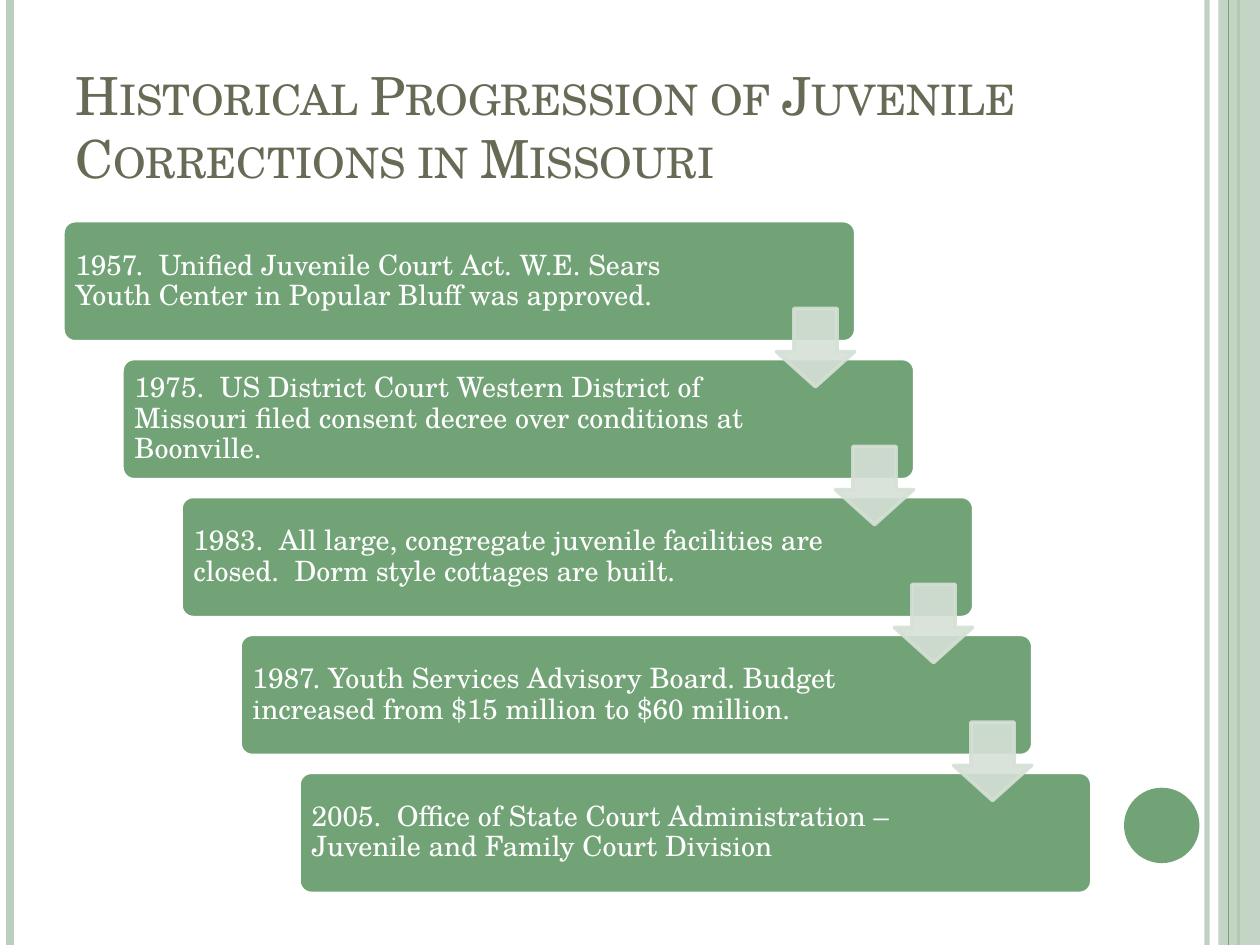
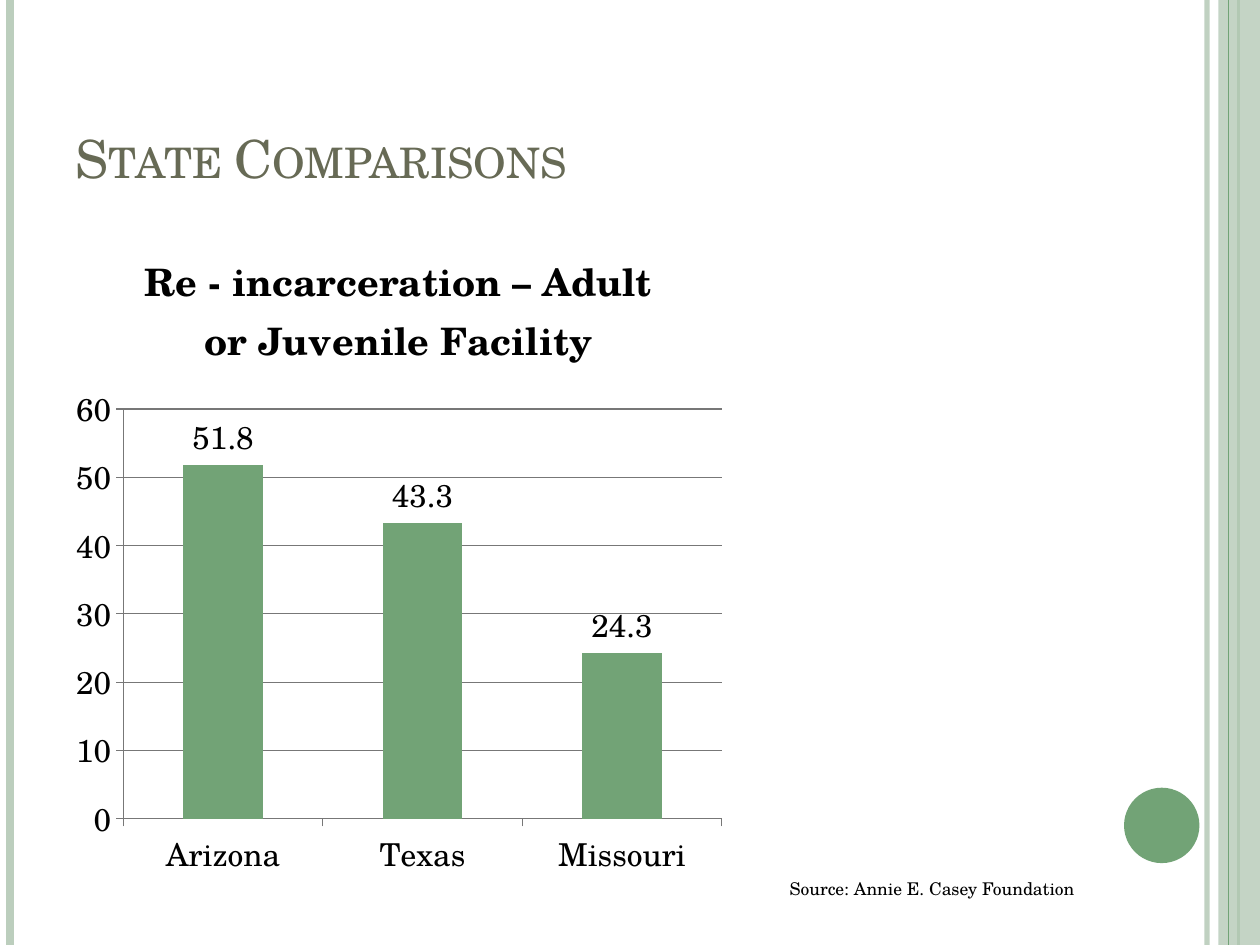
import pptx
import pptx.chart.data
import pptx.dml.color
import pptx.enum.chart
import pptx.enum.shapes
import pptx.enum.text
import pptx.oxml.ns
import pptx.oxml.xmlchemy
import pptx.util
from pptx.util import Cm

FONT = "TeX Gyre Schola"
GREEN = "72A376"
PALE = "BCCEBD"
MIST = "D5E0D6"
OLIVE = "676A55"
WHITE = "FFFFFF"
BLACK = "000000"
GRAY = "777777"
shapes_kind = pptx.enum.shapes.MSO_SHAPE
anchor = pptx.enum.text.MSO_ANCHOR
new_element = pptx.oxml.xmlchemy.OxmlElement


def paint(fill, color):
    fill.solid()
    fill.fore_color.rgb = pptx.dml.color.RGBColor.from_string(color)


def write(para, text, size, color):
    span = para.add_run()
    span.text = text
    span.font.name = FONT
    span.font.size = pptx.util.Pt(size)
    paint(span.font.fill, color)
    return span


deck = pptx.Presentation()
deck.slide_width = Cm(25.4)
deck.slide_height = Cm(19.05)
translucent = []
pages = []

edge_lines = [
    (24.33, PALE, 3, 93),
    (0.2, PALE, 4.5, 100),
    (24.97, GREEN, 1.5, 100),
    (24.77, GREEN, 0.75, 100),
]

for title in ["Historical Progression of Juvenile Corrections in Missouri",
              "State Comparisons"]:
    page = deck.slides.add_slide(deck.slide_layouts[6])
    pages.append(page)
    paint(page.background.fill, WHITE)

    for number, (x, color, width, opacity) in enumerate(edge_lines):
        if number == 3:
            band = page.shapes.add_shape(
                shapes_kind.RECTANGLE, Cm(24.56), 0, Cm(0.84), deck.slide_height)
            band.shadow.inherit = False
            paint(band.fill, PALE)
            band.line.fill.background()
            translucent.append((band, 87))
        edge = page.shapes.add_connector(
            pptx.enum.shapes.MSO_CONNECTOR.STRAIGHT,
            Cm(x), 0, Cm(x), deck.slide_height)
        paint(edge.line.fill, color)
        edge.line.width = pptx.util.Pt(width)
        edge.element.spPr.append(new_element("a:effectLst"))
        if opacity < 100:
            translucent.append((edge, opacity))

    disc = page.shapes.add_shape(
        shapes_kind.OVAL, Cm(22.66), Cm(15.88), Cm(1.52), Cm(1.52))
    disc.shadow.inherit = False
    paint(disc.fill, GREEN)
    disc.line.fill.background()

    heading = page.shapes.add_textbox(Cm(1.27), Cm(0.76), Cm(20.75), Cm(3.18))
    heading.text_frame.word_wrap = True
    heading.text_frame.vertical_anchor = anchor.BOTTOM
    span = write(heading.text_frame.paragraphs[0], title, 30, OLIVE)
    span.font._element.set("cap", "small")

history_page, comparison_page = pages

milestones = [
    "1957.  Unified Juvenile Court Act. W.E. Sears Youth Center in Popular Bluff was approved.",
    "1975.  US District Court Western District of Missouri filed consent decree over conditions at Boonville.",
    "1983.  All large, congregate juvenile facilities are closed.  Dorm style cottages are built.",
    "1987. Youth Services Advisory Board. Budget increased from $15 million to $60 million.",
    "2005.  Office of State Court Administration – Juvenile and Family Court Division",
]
step_x, step_y = 1.19, 2.78

for number, milestone in enumerate(milestones):
    box = history_page.shapes.add_shape(
        shapes_kind.ROUNDED_RECTANGLE,
        Cm(1.27 + number * step_x), Cm(4.45 + number * step_y), Cm(15.98), Cm(2.44))
    box.adjustments[0] = 0.1
    box.shadow.inherit = False
    paint(box.fill, GREEN)
    paint(box.line.fill, WHITE)
    box.line.width = pptx.util.Pt(2)
    frame = box.text_frame
    frame.word_wrap = True
    frame.vertical_anchor = anchor.MIDDLE
    frame.margin_left = Cm(0.18)
    frame.margin_right = Cm(2.6)
    frame.margin_top = frame.margin_bottom = Cm(0.18)
    para = frame.paragraphs[0]
    para.alignment = pptx.enum.text.PP_ALIGN.LEFT
    para.line_spacing = 0.9
    write(para, milestone, 16, WHITE)

for number in range(len(milestones) - 1):
    arrow = history_page.shapes.add_shape(
        shapes_kind.DOWN_ARROW,
        Cm(15.65 + number * step_x), Cm(6.22 + number * step_y), Cm(1.58), Cm(1.58))
    arrow.adjustments[0] = 0.55
    arrow.adjustments[1] = 0.45
    arrow.shadow.inherit = False
    paint(arrow.fill, MIST)
    paint(arrow.line.fill, MIST)
    arrow.line.width = pptx.util.Pt(2)
    translucent.append((arrow, 90))

rates = pptx.chart.data.CategoryChartData()
rates.categories = ["Arizona", "Texas", "Missouri"]
rates.add_series("Series 1", [51.8, 43.3, 24.3])
chart = comparison_page.shapes.add_chart(
    pptx.enum.chart.XL_CHART_TYPE.COLUMN_CLUSTERED,
    Cm(1.27), Cm(4.45), Cm(13.55), Cm(13.55), rates).chart
chart.has_legend = False
chart.font.name = FONT
chart.font.size = pptx.util.Pt(18)
paint(chart.font.fill, BLACK)
chart.has_title = True
chart.chart_title.include_in_layout = False
span = write(chart.chart_title.text_frame.paragraphs[0],
             "Re - incarceration – Adult or Juvenile Facility", 21.6, BLACK)
span.font.bold = True

value_axis = chart.value_axis
value_axis.minimum_scale = 0
value_axis.maximum_scale = 60
value_axis.major_unit = 10
value_axis.has_major_gridlines = True
paint(value_axis.major_gridlines.format.line.fill, GRAY)
for axis in (value_axis, chart.category_axis):
    axis.major_tick_mark = pptx.enum.chart.XL_TICK_MARK.OUTSIDE
    paint(axis.format.line.fill, GRAY)

plot = chart.plots[0]
plot.gap_width = 150
plot.vary_by_categories = False
paint(plot.series[0].format.fill, GREEN)
plot.has_data_labels = True
plot.data_labels.show_value = True
plot.data_labels.position = pptx.enum.chart.XL_LABEL_POSITION.OUTSIDE_END

plot_area = chart.element.find(".//" + pptx.oxml.ns.qn("c:plotArea"))
for old_layout in plot_area.findall(pptx.oxml.ns.qn("c:layout")):
    plot_area.remove(old_layout)
layout = new_element("c:layout")
manual = new_element("c:manualLayout")
layout.append(manual)
for tag, value in [("layoutTarget", "inner"), ("xMode", "edge"), ("yMode", "edge"),
                   ("x", "0.09"), ("y", "0.28"), ("w", "0.89"), ("h", "0.61")]:
    setting = new_element("c:" + tag)
    setting.set("val", value)
    manual.append(setting)
plot_area.insert(0, layout)

source = comparison_page.shapes.add_textbox(Cm(15.67), Cm(17.58), Cm(6.99), Cm(0.69))
source.text_frame.word_wrap = True
write(source.text_frame.paragraphs[0], "Source: Annie E. Casey Foundation", 10, BLACK)

for shape, opacity in translucent:
    for color in shape.element.spPr.iter(pptx.oxml.ns.qn("a:srgbClr")):
        alpha = new_element("a:alpha")
        alpha.set("val", str(opacity * 1000))
        color.append(alpha)

deck.save("out.pptx")
